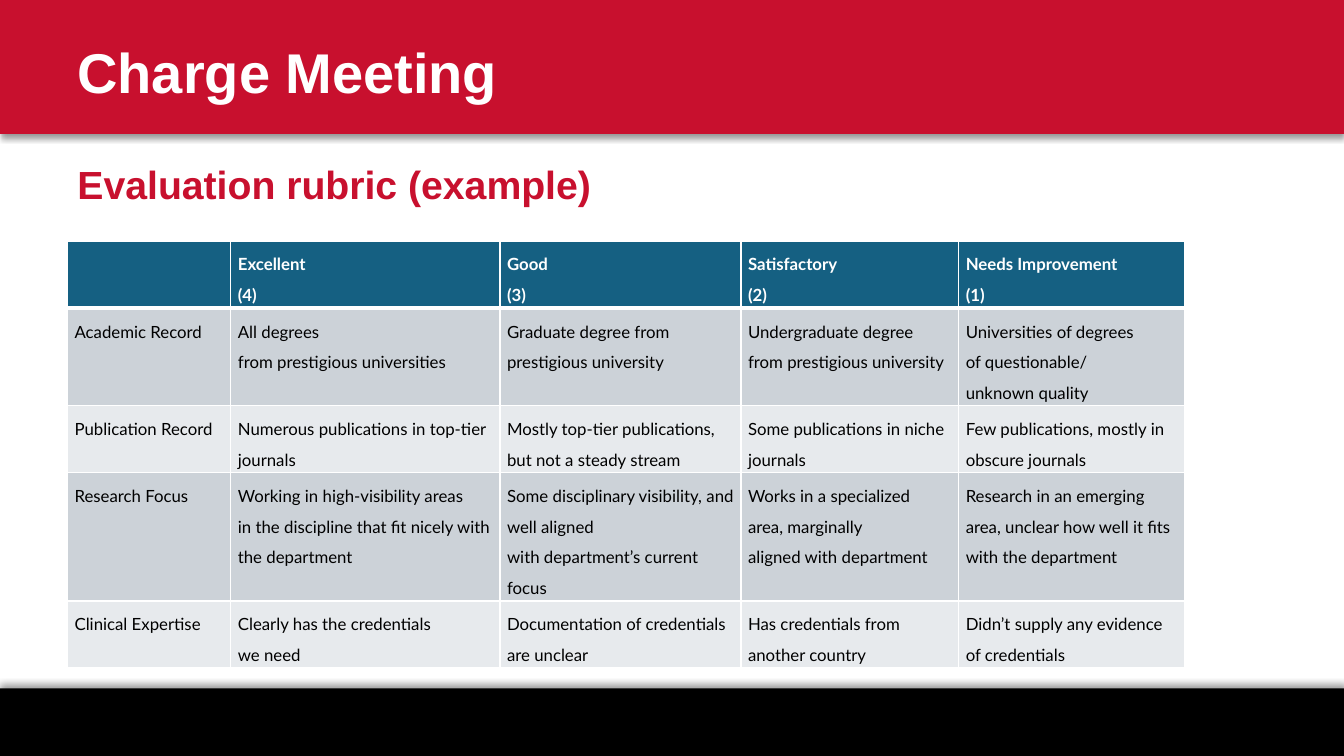
from dataclasses import dataclass

from lxml import etree
from pptx import Presentation
from pptx import util as u
from pptx.dml import color
from pptx.enum import shapes, text
from pptx.oxml import ns

TITLE = "Charge Meeting"
HEAD = "Evaluation rubric (example)"
TIE = chr(160)
ROWS = [
    ["", "Excellent~\n(4)", "Good~\n(3)", "Satisfactory~\n(2)",
     "Needs~Improvement~\n(1)"],
    ["Academic~Record",
     "All degrees from~prestigious~universities",
     "Graduate degree~from prestigious~university",
     "Undergraduate~degree from~prestigious~university",
     "Universities of~degrees of~questionable/\nunknown quality"],
    ["Publication~Record",
     "Numerous~publications in~top-tier journals",
     "Mostly top-tier~publications, but~not a steady~stream",
     "Some~publications in~niche journals",
     "Few publications,~mostly in obscure~journals"],
    ["Research~Focus",
     "Working in high-visibility areas in~the discipline that~fit nicely with the~department",
     "Some disciplinary~visibility, and well~aligned with~department’s~current focus",
     "Works in a~specialized area,~marginally aligned~with department",
     "Research in an~emerging area,~unclear how well it~fits with the~department"],
    ["Clinical~Expertise",
     "Clearly has the~credentials we~need",
     "Documentation of~credentials are~unclear",
     "Has credentials~from another~country",
     "Didn’t supply any~evidence of~credentials"],
]
COLS = [1.62, 2.67, 2.39, 2.16, 2.24]
TALL = [0.64, 0.93, 0.64, 1.21, 0.64]


@dataclass
class Theme:
    red: str = "C8102E"
    blue: str = "156082"
    bands: tuple = ("E7EAED", "CCD2D8")
    white: str = "FFFFFF"
    black: str = "000000"
    font: str = "Arial"
    cell: str = "Lato"
    title: int = 40
    head: int = 28
    body: int = 12
    lead: float = 21.8
    thin: float = 0.96
    thick: float = 2.89


T = Theme()
WIDE, HIGH = 13.33, 7.5
EDGE = 0.67
TOP = 1.33


def rgb(hue):
    return color.RGBColor.from_string(hue)


def write(para, words, face, size, hue, bold):
    run = para.add_run()
    run.text = words
    run.font.name = face
    run.font.size = u.Pt(size)
    run.font.bold = bold
    run.font.color.rgb = rgb(hue)


def band(slide, top, high, hue, turn):
    box = slide.shapes.add_shape(
        shapes.MSO_SHAPE.RECTANGLE, 0, u.Inches(top), u.Inches(WIDE), u.Inches(high))
    box.fill.solid()
    box.fill.fore_color.rgb = rgb(hue)
    box.line.fill.background()
    box.shadow.inherit = False
    glow = box.element.spPr.find(ns.qn("a:effectLst"))
    cast = etree.SubElement(
        glow, ns.qn("a:outerShdw"), blurRad=str(u.Pt(4)), dist=str(u.Pt(3)),
        dir=str(turn * 60000), algn="t", rotWithShape="0")
    tone = etree.SubElement(cast, ns.qn("a:srgbClr"), val=T.black)
    etree.SubElement(tone, ns.qn("a:alpha"), val="40000")


def label(slide, place, words, size, hue, anchor, inset):
    box = slide.shapes.add_textbox(*map(u.Inches, place))
    frame = box.text_frame
    frame.word_wrap = True
    frame.vertical_anchor = anchor
    frame.margin_top = u.Inches(inset)
    write(frame.paragraphs[0], words, T.font, size, hue, True)


def border(cell, side, width):
    line = etree.SubElement(
        cell._tc.get_or_add_tcPr(), ns.qn("a:ln" + side), w=str(u.Pt(width)))
    fill = etree.SubElement(line, ns.qn("a:solidFill"))
    etree.SubElement(fill, ns.qn("a:srgbClr"), val=T.white)


def fill_cell(cell, words, row):
    first = row == 0
    for side in "LRTB":
        wide = (row, side) in ((0, "B"), (1, "T"))
        border(cell, side, T.thick if wide else T.thin)
    cell.fill.solid()
    cell.fill.fore_color.rgb = rgb(T.blue if first else T.bands[row % 2])
    cell.margin_left = cell.margin_right = u.Inches(0.07)
    cell.margin_top = cell.margin_bottom = u.Inches(0.03)
    if not words:
        return
    frame = cell.text_frame
    for i, part in enumerate(words.replace("~", TIE).split("\n")):
        para = frame.add_paragraph() if i else frame.paragraphs[0]
        para.line_spacing = u.Pt(T.lead)
        write(para, part, T.cell, T.body, T.white if first else T.black, first)


def rubric(slide):
    grid = slide.shapes.add_table(
        len(ROWS), len(COLS), u.Inches(EDGE), u.Inches(2.39),
        u.Inches(sum(COLS)), u.Inches(sum(TALL))).table
    grid.first_row = grid.horz_banding = False
    for col, wide in zip(grid.columns, COLS):
        col.width = u.Inches(wide)
    for r, (row, high) in enumerate(zip(ROWS, TALL)):
        grid.rows[r].height = u.Inches(high)
        for c, words in enumerate(row):
            fill_cell(grid.cell(r, c), words, r)


def main():
    deck = Presentation()
    deck.slide_width, deck.slide_height = u.Inches(WIDE), u.Inches(HIGH)
    slide = deck.slides.add_slide(deck.slide_layouts[6])
    band(slide, HIGH - EDGE, EDGE, T.black, 270)
    band(slide, 0, TOP, T.red, 90)
    label(slide, (EDGE, 0.17, 11, 1.08), TITLE, T.title, T.white,
          text.MSO_ANCHOR.MIDDLE, 0.05)
    label(slide, (EDGE, 1.5, 11.11, 0.58), HEAD, T.head, T.red,
          text.MSO_ANCHOR.TOP, 0.09)
    rubric(slide)
    deck.save("out.pptx")


if __name__ == "__main__":
    main()
